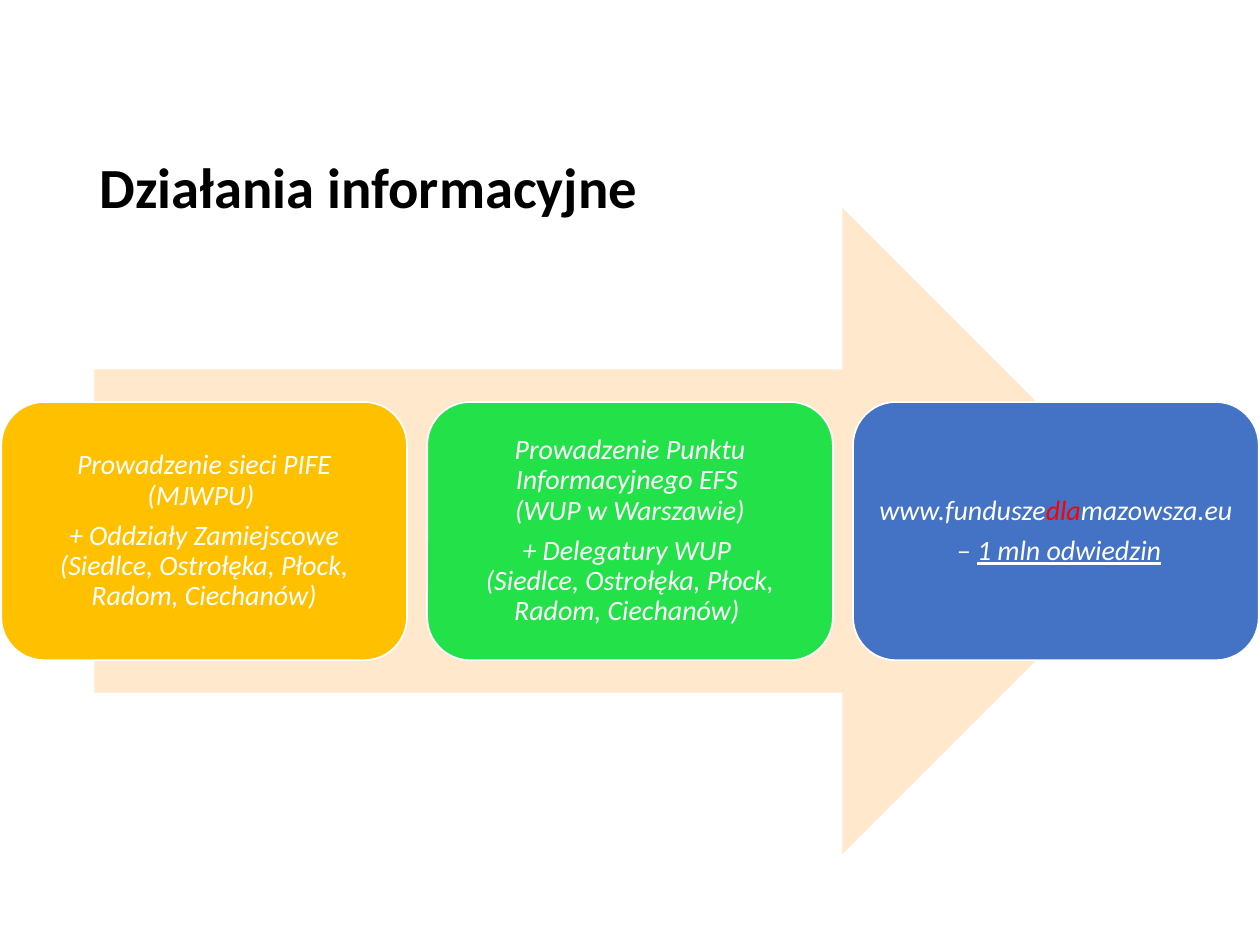
"""Build the slide on information activities: an arrow behind three cards."""
from dataclasses import dataclass

import pptx
import pptx.dml.color
import pptx.enum.shapes
import pptx.enum.text
import pptx.util

Inches = pptx.util.Inches
Pt = pptx.util.Pt
Shapes = pptx.enum.shapes.MSO_SHAPE
Align = pptx.enum.text.PP_ALIGN

FONT = "Calibri"
COLOURS = {
    "black": "000000",
    "white": "FFFFFF",
    "red": "FF0000",
    "cream": "FFE8CC",
    "amber": "FFC000",
    "green": "23E148",
    "blue": "4472C4",
}
CARD_LEFT, CARD_TOP = 0.01, 3.19
CARD_WIDTH, CARD_HEIGHT = 3.22, 2.05
CARD_STEP = 3.38
CARD_INSET = 0.07


@dataclass(frozen=True)
class Span:
    text: str
    colour: str = "white"
    underline: bool = False


@dataclass(frozen=True)
class Card:
    fill: str
    paragraphs: tuple[tuple[Span, ...], ...]


CARDS = (
    Card("amber", (
        (Span("Prowadzenie sieci PIFE (MJWPU) "),),
        (Span("+ Oddziały Zamiejscowe (Siedlce, Ostrołęka, Płock, Radom, Ciechanów)"),),
    )),
    Card("green", (
        (Span("Prowadzenie Punktu Informacyjnego EFS \v(WUP w\u00a0Warszawie)"),),
        (Span("+ Delegatury WUP \v(Siedlce, Ostrołęka, Płock, Radom, Ciechanów) "),),
    )),
    Card("blue", (
        (Span("www.fundusze"), Span("dla", "red"), Span("mazowsza.eu")),
        (Span(" – "), Span("1 mln odwiedzin", underline=True)),
    )),
)


def rgb(name: str) -> pptx.dml.color.RGBColor:
    """Return the named colour."""
    return pptx.dml.color.RGBColor.from_string(COLOURS[name])


def style_run(run, size: float, colour: str) -> None:
    """Set the font, size and colour of a run."""
    run.font.name = FONT
    run.font.size = Pt(size)
    run.font.color.rgb = rgb(colour)


def add_filled_shape(page, kind, left: float, top: float, width: float, height: float, fill: str):
    """Add a preset shape with a plain fill and no line."""
    shape = page.shapes.add_shape(kind, Inches(left), Inches(top), Inches(width), Inches(height))
    shape.shadow.inherit = False
    shape.fill.solid()
    shape.fill.fore_color.rgb = rgb(fill)
    shape.line.fill.background()
    return shape


def add_title(page, text: str) -> None:
    """Add the bold title of the slide."""
    box = page.shapes.add_textbox(Inches(0.69), Inches(1), Inches(8.62), Inches(1.02))
    frame = box.text_frame
    frame.word_wrap = True
    frame.vertical_anchor = pptx.enum.text.MSO_ANCHOR.MIDDLE
    frame.text = text
    para = frame.paragraphs[0]
    para.line_spacing = 0.9
    style_run(para.runs[0], 32.4, "black")
    para.runs[0].font.bold = True


def write_paragraph(para, spans: tuple[Span, ...]) -> None:
    """Write the spans of one centred card paragraph."""
    para.alignment = Align.CENTER
    para.line_spacing = 0.9
    para.space_after = Pt(5.6)
    for index, span in enumerate(spans):
        if index == 0:
            para.text = span.text
            runs = para.runs
        else:
            runs = (para.add_run(),)
            runs[0].text = span.text
        for run in runs:
            style_run(run, 16, span.colour)
            run.font.italic = True
            if span.underline:
                run.font.underline = True


def add_card(page, card: Card, left: float) -> None:
    """Add a rounded card with its text."""
    box = add_filled_shape(page, Shapes.ROUNDED_RECTANGLE, left, CARD_TOP,
                           CARD_WIDTH, CARD_HEIGHT, card.fill)
    box.line.color.rgb = rgb("white")
    box.line.width = Pt(1)
    frame = box.text_frame
    frame.word_wrap = True
    frame.vertical_anchor = pptx.enum.text.MSO_ANCHOR.MIDDLE
    frame.margin_left = frame.margin_right = Inches(CARD_INSET)
    frame.margin_top = frame.margin_bottom = Inches(CARD_INSET)
    for index, spans in enumerate(card.paragraphs):
        para = frame.add_paragraph() if index else frame.paragraphs[0]
        write_paragraph(para, spans)


def main() -> None:
    """Build and save the deck."""
    deck = pptx.Presentation()
    deck.slide_width, deck.slide_height = Inches(10), Inches(7.5)
    page = deck.slides.add_slide(deck.slide_layouts[6])
    add_title(page, "Działania informacyjne")
    add_filled_shape(page, Shapes.RIGHT_ARROW, 0.75, 1.65, 8.5, 5.13, "cream")
    for column, card in enumerate(CARDS):
        add_card(page, card, CARD_LEFT + column * CARD_STEP)
    deck.save("out.pptx")


if __name__ == "__main__":
    main()
